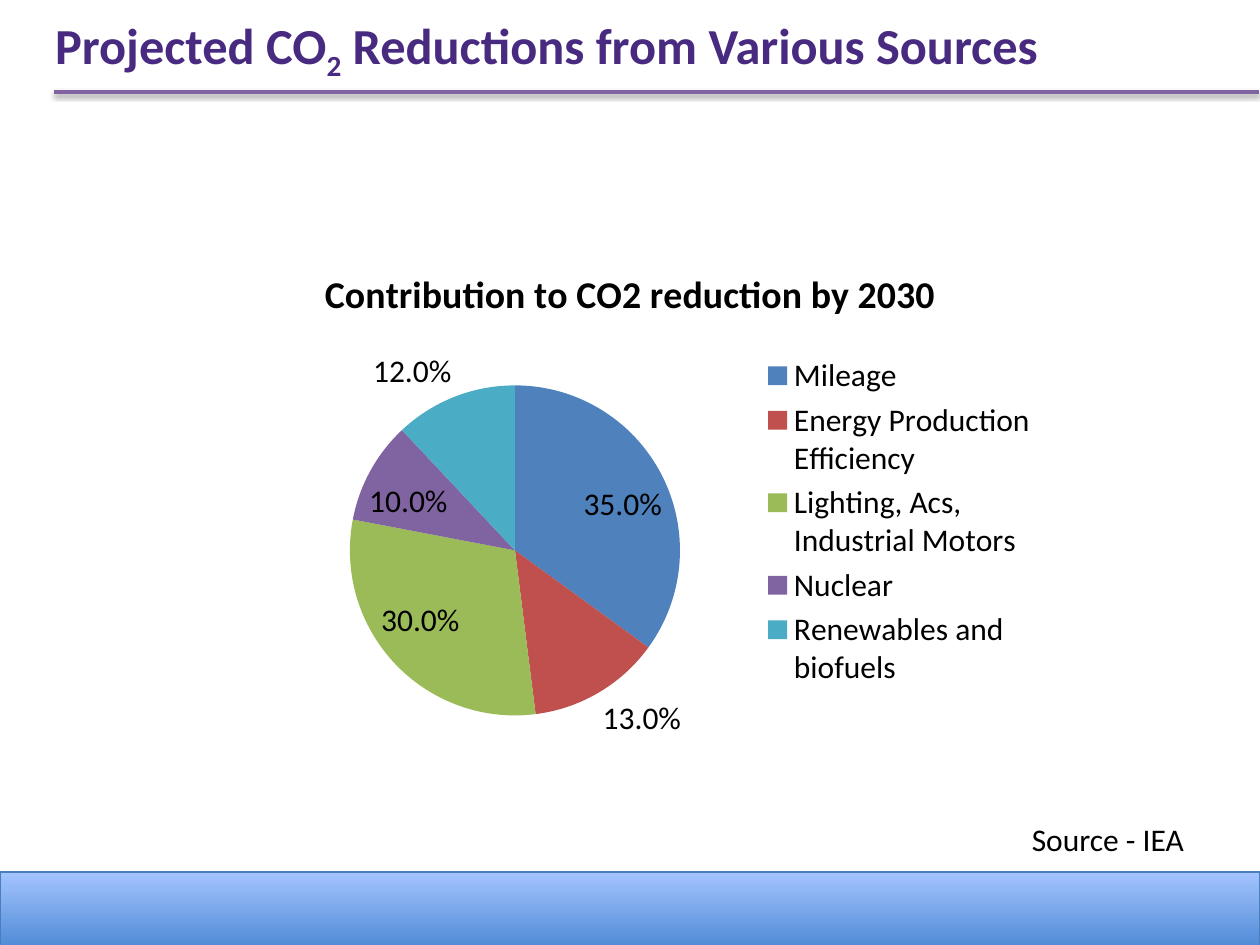
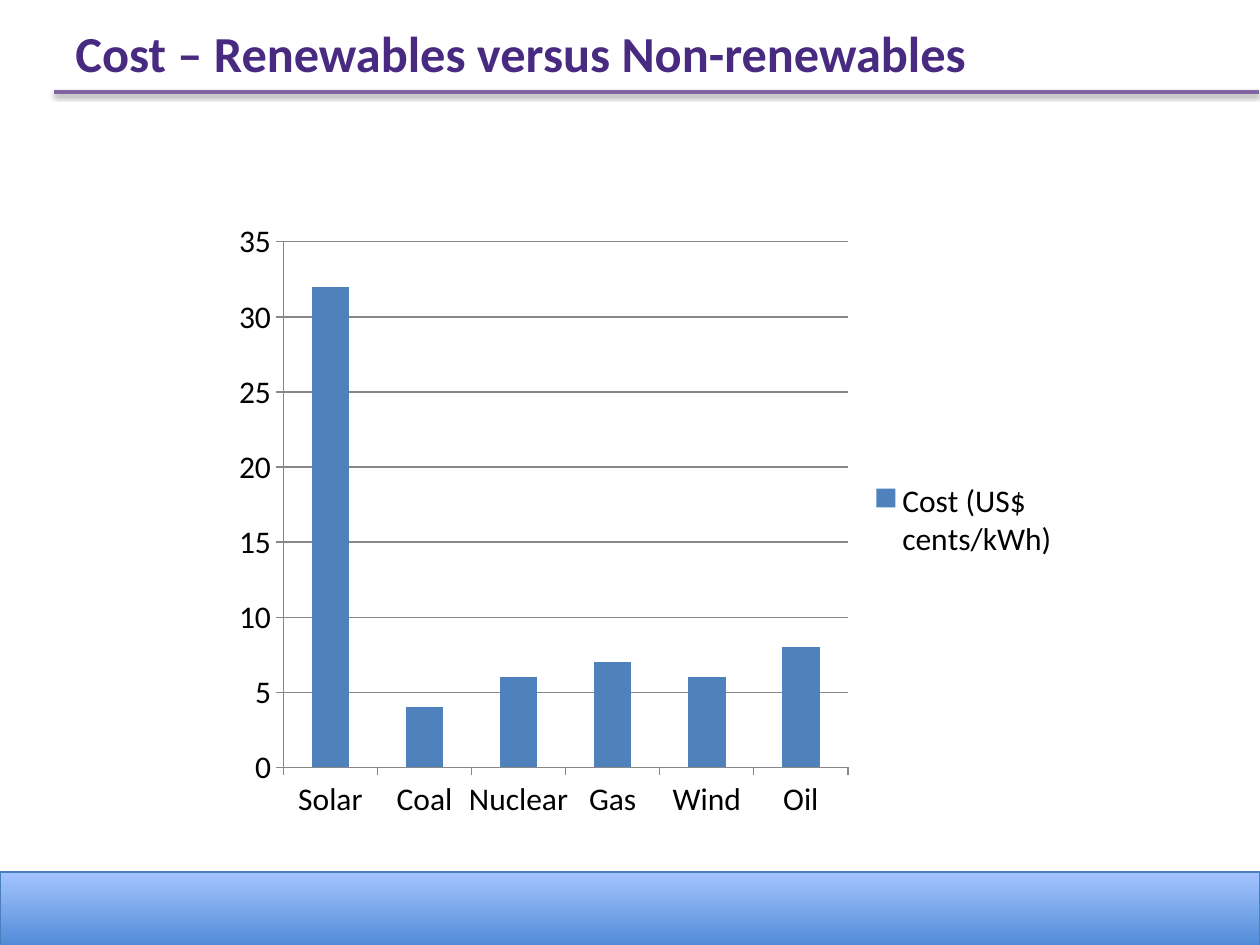
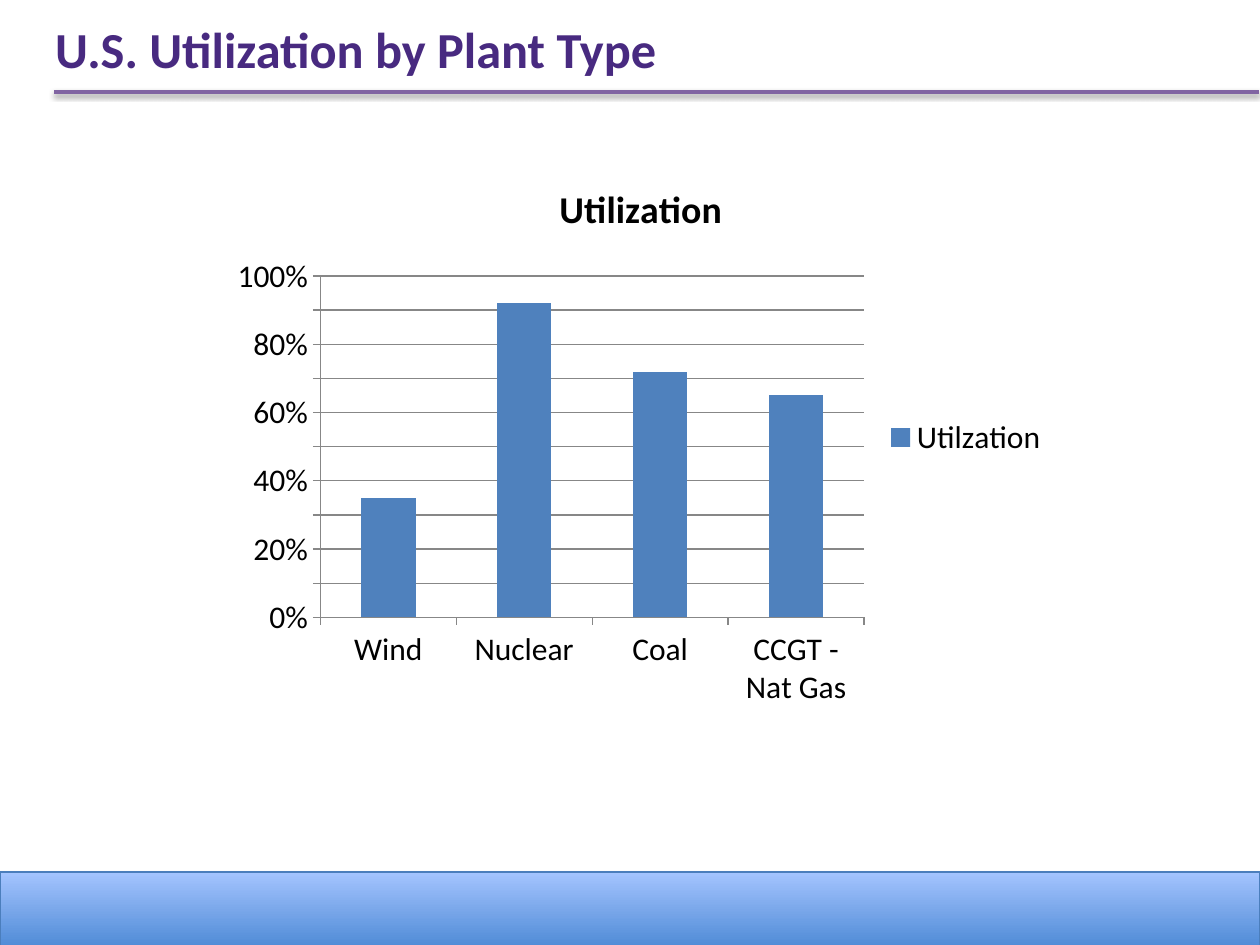
from dataclasses import dataclass

import pptx
import pptx.chart.chart
import pptx.chart.data
import pptx.dml.color
import pptx.enum.chart
import pptx.enum.shapes
import pptx.enum.text
import pptx.oxml
import pptx.oxml.ns
import pptx.slide
import pptx.util
from pptx.util import Cm

# Shared look
FONT = "Calibri"
BLACK = "000000"
TITLE_PURPLE = "482A80"
RULE_PURPLE = "8064A2"
GRID_GREY = "878787"
BAND_LINE = "4B7EBC"
BAND_GRADIENT = ("3F80CE", "A4C4FF")
SERIES_COLORS = ("4F81BD", "C0504D", "9BBB59", "8064A2", "4BACC6")

PIE = pptx.enum.chart.XL_CHART_TYPE.PIE
COLUMNS = pptx.enum.chart.XL_CHART_TYPE.COLUMN_STACKED


@dataclass(frozen=True)
class Box:
    """A place on the slide, in centimetres."""
    left: float
    top: float
    width: float
    height: float

    def lengths(self) -> tuple[Cm, Cm, Cm, Cm]:
        return Cm(self.left), Cm(self.top), Cm(self.width), Cm(self.height)


@dataclass(frozen=True)
class TextPart:
    text: str
    subscript: bool = False


@dataclass(frozen=True)
class ChartSpec:
    kind: pptx.enum.chart.XL_CHART_TYPE
    box: Box
    series_name: str
    values: dict[str, float]
    number_format: str
    title: str = ""


@dataclass(frozen=True)
class Page:
    heading: tuple[TextPart, ...]
    heading_box: Box
    chart: ChartSpec
    source: str = ""


HEADING_BOX = Box(0.86, 0.2, 22.86, 1.55)
SOURCE_BOX = Box(20.55, 16.41, 3.61, 1.02)
BAND_BOX = Box(0, 17.58, 25.4, 1.8)

PAGES = (
    Page(
        (TextPart("Projected CO"), TextPart("2", subscript=True),
         TextPart(" Reductions from Various Sources")),
        HEADING_BOX,
        ChartSpec(
            PIE, Box(4.24, 4.88, 16.94, 11.28),
            "Contribution to CO2 reduction by 2030",
            {"Mileage": 0.35, "Energy Production Efficiency": 0.13,
             "Lighting, Acs, Industrial Motors": 0.3, "Nuclear": 0.1,
             "Renewables and biofuels": 0.12},
            "0.0%", "Contribution to CO2 reduction by 2030"),
        "Source - IEA",
    ),
    Page(
        (TextPart("Cost – Renewables versus Non-renewables"),),
        Box(1.27, 0.43, 22.86, 1.27),
        ChartSpec(
            COLUMNS, Box(4.45, 4.24, 18.42, 12.5), "Cost (US$ cents/kWh)",
            {"Solar": 32, "Coal": 4, "Nuclear": 6, "Gas": 7, "Wind": 6, "Oil": 8},
            "General"),
    ),
    Page(
        (TextPart("U.S. Utilization by Plant Type"),),
        HEADING_BOX,
        ChartSpec(
            COLUMNS, Box(4.45, 3.18, 16.94, 11.28), "Utilzation",
            {"Wind": 0.35, "Nuclear": 0.92, "Coal": 0.72, "CCGT - Nat Gas": 0.65},
            "0%", "Utilization"),
    ),
)


def rgb(color: str) -> pptx.dml.color.RGBColor:
    return pptx.dml.color.RGBColor.from_string(color)


def style_font(font, size: float, color: str = BLACK, bold: bool = False) -> None:
    font.name = FONT
    font.size = pptx.util.Pt(size)
    font.bold = bold
    font.color.rgb = rgb(color)


def style_line(line, color: str, width: float) -> None:
    line.color.rgb = rgb(color)
    line.width = pptx.util.Pt(width)


def cast_shadow(shape, opacity: int, blur: float, distance: float) -> None:
    """Add a black shadow straight below; call after the line is styled."""
    shape.element.spPr.append(pptx.oxml.parse_xml(
        f'<a:effectLst {pptx.oxml.ns.nsdecls("a")}>'
        f'<a:outerShdw blurRad="{pptx.util.Pt(blur)}" dist="{pptx.util.Pt(distance)}"'
        ' dir="5400000" rotWithShape="0">'
        f'<a:srgbClr val="{BLACK}"><a:alpha val="{opacity * 1000}"/></a:srgbClr>'
        '</a:outerShdw></a:effectLst>'))


# Parts every slide has
def add_heading_rule(slide: pptx.slide.Slide) -> None:
    rule = slide.shapes.add_connector(
        pptx.enum.shapes.MSO_CONNECTOR.STRAIGHT,
        Cm(1.09), Cm(1.85), Cm(25.37), Cm(1.85))
    style_line(rule.line, RULE_PURPLE, 2)
    cast_shadow(rule, 38, 3.1, 1.6)


def add_heading(slide: pptx.slide.Slide, parts: tuple[TextPart, ...], box: Box) -> None:
    frame = slide.shapes.add_textbox(*box.lengths()).text_frame
    frame.word_wrap = True
    frame.vertical_anchor = pptx.enum.text.MSO_ANCHOR.MIDDLE
    heading = frame.paragraphs[0]
    style_font(heading.font, 28.8, TITLE_PURPLE, bold=True)
    for part in parts:
        run = heading.add_run()
        run.text = part.text
        if part.subscript:
            run._r.get_or_add_rPr().set("baseline", "-25000")


def add_footer_band(slide: pptx.slide.Slide) -> None:
    band = slide.shapes.add_shape(
        pptx.enum.shapes.MSO_SHAPE.RECTANGLE, *BAND_BOX.lengths())
    band.fill.gradient()
    band.fill.gradient_angle = 90
    for stop, position, color in zip(band.fill.gradient_stops, (0, 1), BAND_GRADIENT):
        stop.position = position
        stop.color.rgb = rgb(color)
    style_line(band.line, BAND_LINE, 0.75)
    cast_shadow(band, 35, 3.1, 1.8)


def add_source(slide: pptx.slide.Slide, source: str) -> None:
    frame = slide.shapes.add_textbox(*SOURCE_BOX.lengths()).text_frame
    frame.word_wrap = False
    frame.auto_size = pptx.enum.text.MSO_AUTO_SIZE.SHAPE_TO_FIT_TEXT
    frame.text = source
    style_font(frame.paragraphs[0].font, 18)


# Charts
def style_pie(chart: pptx.chart.chart.Chart, spec: ChartSpec) -> None:
    plot = chart.plots[0]
    plot.vary_by_categories = True
    for index, color in enumerate(SERIES_COLORS):
        slice_fill = plot.series[0].points[index].format.fill
        slice_fill.solid()
        slice_fill.fore_color.rgb = rgb(color)
    plot.has_data_labels = True
    labels = plot.data_labels
    labels.show_value = True
    labels.number_format = spec.number_format
    labels.number_format_is_linked = False
    labels.position = pptx.enum.chart.XL_LABEL_POSITION.BEST_FIT
    style_font(labels.font, 18)


def style_columns(chart: pptx.chart.chart.Chart, spec: ChartSpec) -> None:
    plot = chart.plots[0]
    plot.vary_by_categories = False
    plot.gap_width = 150
    plot.overlap = 100
    column_fill = plot.series[0].format.fill
    column_fill.solid()
    column_fill.fore_color.rgb = rgb(SERIES_COLORS[0])
    for axis in (chart.category_axis, chart.value_axis):
        axis.major_tick_mark = pptx.enum.chart.XL_TICK_MARK.OUTSIDE
        style_line(axis.format.line, GRID_GREY, 0.75)
    chart.value_axis.has_major_gridlines = True
    style_line(chart.value_axis.major_gridlines.format.line, GRID_GREY, 0.75)
    chart.value_axis.tick_labels.number_format = spec.number_format
    chart.value_axis.tick_labels.number_format_is_linked = False


def add_chart(slide: pptx.slide.Slide, spec: ChartSpec) -> None:
    data = pptx.chart.data.CategoryChartData(number_format=spec.number_format)
    data.categories = list(spec.values)
    data.add_series(spec.series_name, list(spec.values.values()))
    chart = slide.shapes.add_chart(spec.kind, *spec.box.lengths(), data).chart
    style_font(chart.font, 18)
    chart.has_title = bool(spec.title)
    if spec.title:
        chart.chart_title.include_in_layout = False
        frame = chart.chart_title.text_frame
        frame.text = spec.title
        style_font(frame.paragraphs[0].font, 21.6, bold=True)
    chart.has_legend = True
    chart.legend.position = pptx.enum.chart.XL_LEGEND_POSITION.RIGHT
    chart.legend.include_in_layout = False
    if spec.kind == PIE:
        style_pie(chart, spec)
    else:
        style_columns(chart, spec)


def main() -> None:
    deck = pptx.Presentation()
    deck.slide_width, deck.slide_height = Cm(25.4), Cm(19.05)
    blank = deck.slide_layouts[6]
    for page in PAGES:
        slide = deck.slides.add_slide(blank)
        add_heading_rule(slide)
        add_heading(slide, page.heading, page.heading_box)
        add_chart(slide, page.chart)
        if page.source:
            add_source(slide, page.source)
        add_footer_band(slide)
    deck.save("out.pptx")


if __name__ == "__main__":
    main()
